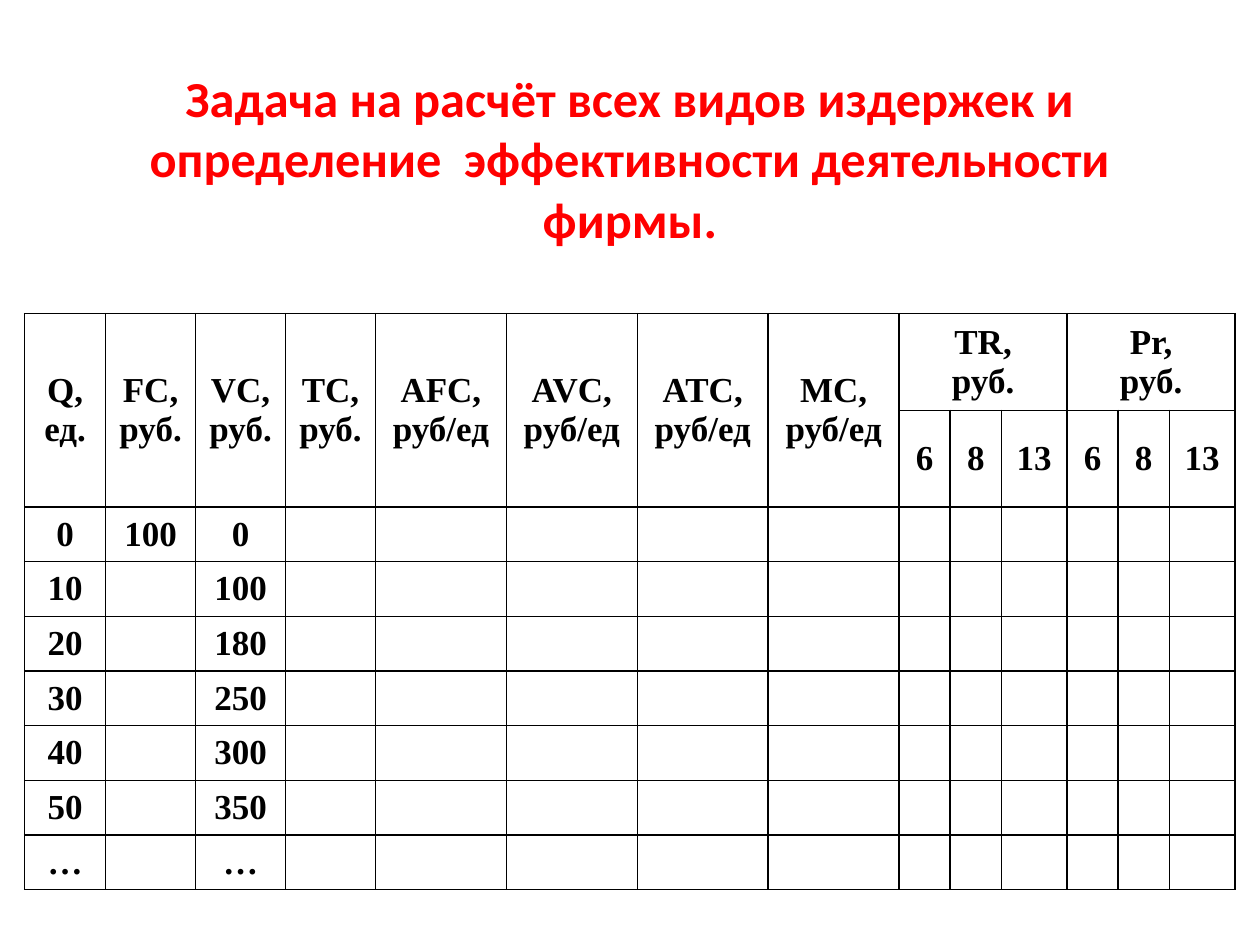
from lxml.etree import SubElement
from pptx import Presentation
from pptx.dml.color import RGBColor
from pptx.enum.text import MSO_ANCHOR, PP_ALIGN
from pptx.oxml.ns import qn
from pptx.util import Pt

RED = RGBColor(0xFF, 0x00, 0x00)
BLACK = RGBColor(0x00, 0x00, 0x00)
WHITE = RGBColor(0xFF, 0xFF, 0xFF)

TITLE = "Задача на расчёт всех видов издержек и определение  эффективности деятельности фирмы."
TITLE_FONT = {"name": "Calibri", "size": Pt(28.8), "bold": True}
TABLE_FONT = {"name": "Times New Roman", "size": Pt(20), "bold": True}
FRAME_FORMAT = {"word_wrap": True, "vertical_anchor": MSO_ANCHOR.MIDDLE}
TABLE_FORMAT = {"first_row": False, "horz_banding": False}

COST_HEADINGS = ["Q,\nед.", "FC,\nруб.", "VC,\nруб.", "TC,\nруб.",
                 "AFC,\nруб/ед", "AVC,\nруб/ед", "ATC,\nруб/ед", "MC,\nруб/ед"]
PRICE_HEADINGS = ["TR,\nруб.", "Pr,\nруб."]
PRICES = ["6", "8", "13"]
OUTPUTS = [("0", "100", "0"), ("10", "", "100"), ("20", "", "180"), ("30", "", "250"),
           ("40", "", "300"), ("50", "", "350"), ("…", "", "…")]
COLUMN_WIDTHS = [46.3] + [51.4] * 3 + [74.8] * 4 + [29.2, 29.2, 37.6] * 2
ROW_HEIGHTS = [51.7] * 2 + [29.5] * len(OUTPUTS)
HANGING = Pt(27)


def apply_format(target, values):
    """Set every named attribute on the target."""
    for name, value in values.items():
        setattr(target, name, value)


def write_paragraph(paragraph, text, font_format, color):
    """Write one centred, formatted run."""
    paragraph.alignment = PP_ALIGN.CENTER
    run = paragraph.add_run()
    run.text = text
    apply_format(run.font, font_format)
    run.font.color.rgb = color


def draw_borders(cell):
    """Rule all four sides of a cell in black."""
    properties = cell._tc.get_or_add_tcPr()
    for position, side in enumerate(("lnL", "lnR", "lnT", "lnB")):
        border = SubElement(properties, qn(f"a:{side}"), w=str(Pt(1)))
        properties.insert(position, border)
        fill = SubElement(border, qn("a:solidFill"))
        SubElement(fill, qn("a:srgbClr"), val=str(BLACK))


def fill_cell(cell, text):
    """Write the lines of a cell as hanging paragraphs."""
    cell.vertical_anchor = MSO_ANCHOR.MIDDLE
    frame = cell.text_frame
    for index, line in enumerate(text.split("\n")):
        paragraph = frame.paragraphs[0] if index == 0 else frame.add_paragraph()
        write_paragraph(paragraph, line, TABLE_FONT, BLACK)
        apply_format(paragraph._p.get_or_add_pPr(), {"marL": HANGING, "indent": -HANGING})


def add_title(slide, left, top, width, height):
    """Place the task title."""
    frame = slide.shapes.add_textbox(Pt(left), Pt(top), Pt(width), Pt(height)).text_frame
    apply_format(frame, FRAME_FORMAT)
    write_paragraph(frame.paragraphs[0], TITLE, TITLE_FONT, RED)


def add_cost_table(slide, left, top, width, height):
    """Place the cost table, scaling its grid to the box."""
    costs = slide.shapes.add_table(len(ROW_HEIGHTS), len(COLUMN_WIDTHS),
                                   Pt(left), Pt(top), Pt(width), Pt(height)).table
    apply_format(costs, TABLE_FORMAT)
    for column, share in zip(costs.columns, COLUMN_WIDTHS):
        column.width = Pt(width * share / sum(COLUMN_WIDTHS))
    for row, share in zip(costs.rows, ROW_HEIGHTS):
        row.height = Pt(height * share / sum(ROW_HEIGHTS))
    for cell in costs.iter_cells():
        cell.fill.solid()
        cell.fill.fore_color.rgb = WHITE
        draw_borders(cell)

    for column, heading in enumerate(COST_HEADINGS):
        costs.cell(0, column).merge(costs.cell(1, column))
        fill_cell(costs.cell(0, column), heading)
    for group, heading in enumerate(PRICE_HEADINGS):
        first = len(COST_HEADINGS) + group * len(PRICES)
        costs.cell(0, first).merge(costs.cell(0, first + len(PRICES) - 1))
        fill_cell(costs.cell(0, first), heading)
        for offset, price in enumerate(PRICES):
            fill_cell(costs.cell(1, first + offset), price)
    for row, values in enumerate(OUTPUTS, start=2):
        for column, value in enumerate(values):
            if value:
                fill_cell(costs.cell(row, column), value)


def main():
    """Build and save the slide."""
    presentation = Presentation()
    apply_format(presentation, {"slide_width": Pt(720), "slide_height": Pt(540)})
    slide = presentation.slides.add_slide(presentation.slide_layouts[6])
    add_title(slide, 36, 36, 648, 108)
    add_cost_table(slide, 14.1, 179.2, 691.8, 309.9)
    presentation.save("out.pptx")


if __name__ == "__main__":
    main()
